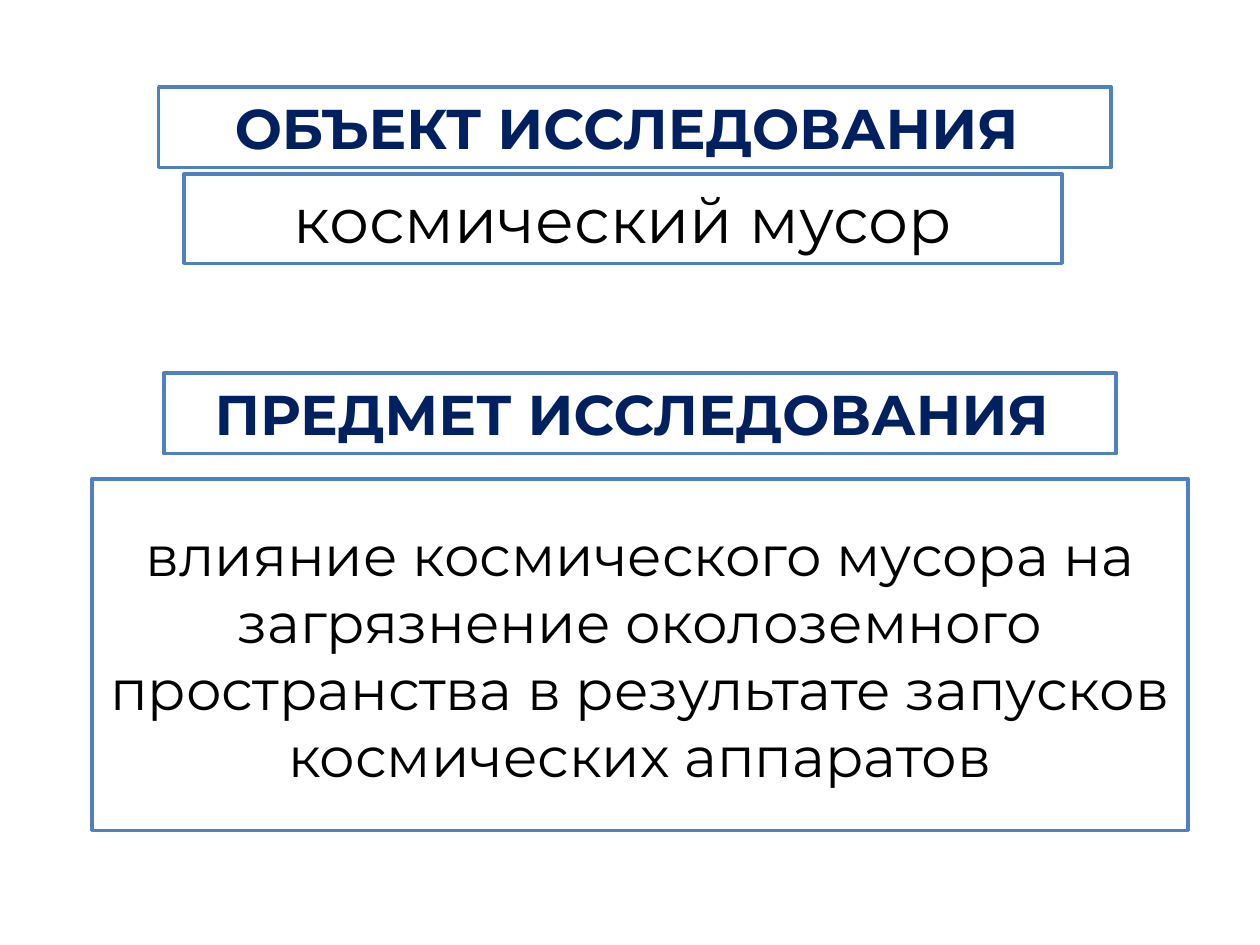
from pptx import Presentation
from pptx.dml.color import RGBColor
from pptx.enum.shapes import MSO_SHAPE
from pptx.enum.text import MSO_ANCHOR, MSO_AUTO_SIZE, PP_ALIGN
from pptx.util import Inches, Pt

RECT = MSO_SHAPE.RECTANGLE
MIDDLE = MSO_ANCHOR.MIDDLE
GROW = MSO_AUTO_SIZE.SHAPE_TO_FIT_TEXT
CENTER = PP_ALIGN.CENTER

FONT = "Montserrat"
WHITE, BLACK, NAVY, BLUE = "FFFFFF", "000000", "002060", "4F81BD"


def color(code):
    return RGBColor.from_string(code)


def write(frame, text, size=32, ink=BLACK, bold=False):
    frame.word_wrap = True
    frame.auto_size = GROW
    frame.vertical_anchor = MIDDLE
    para = frame.paragraphs[0]
    para.alignment = CENTER
    run = para.add_run()
    run.text = text
    font = run.font
    font.name, font.size, font.bold = FONT, Pt(size), bold
    font.color.rgb = color(ink)


def frame_box(slide, box, text, **style):
    shape = slide.shapes.add_shape(RECT, *map(Inches, box))
    shape.shadow.inherit = False
    shape.fill.solid()
    shape.fill.fore_color.rgb = color(WHITE)
    shape.line.color.rgb = color(BLUE)
    shape.line.width = Pt(2)
    write(shape.text_frame, text, **style)


def section(slide, left, top, title, body_box, body, size):
    # Heading, then the framed statement below it
    frame_box(slide, (left, top, 7.56, 0.64), title, ink=NAVY, bold=True)
    frame_box(slide, body_box, body, size=size)


def main():
    deck = Presentation()
    deck.slide_width, deck.slide_height = Inches(10), Inches(7.5)
    slide = deck.slides.add_slide(deck.slide_layouts[6])

    # Object of the study
    section(slide, 1.26, 0.69, "ОБЪЕКТ ИССЛЕДОВАНИЯ ",
            (1.46, 1.38, 6.97, 0.71), "космический мусор", 36)

    # Subject of the study
    section(slide, 1.3, 2.96, "ПРЕДМЕТ ИССЛЕДОВАНИЯ ",
            (0.73, 3.8, 8.7, 2.79),
            "влияние космического мусора на загрязнение околоземного "
            "пространства в результате запусков космических аппаратов", 32)

    deck.save("out.pptx")


if __name__ == "__main__":
    main()
